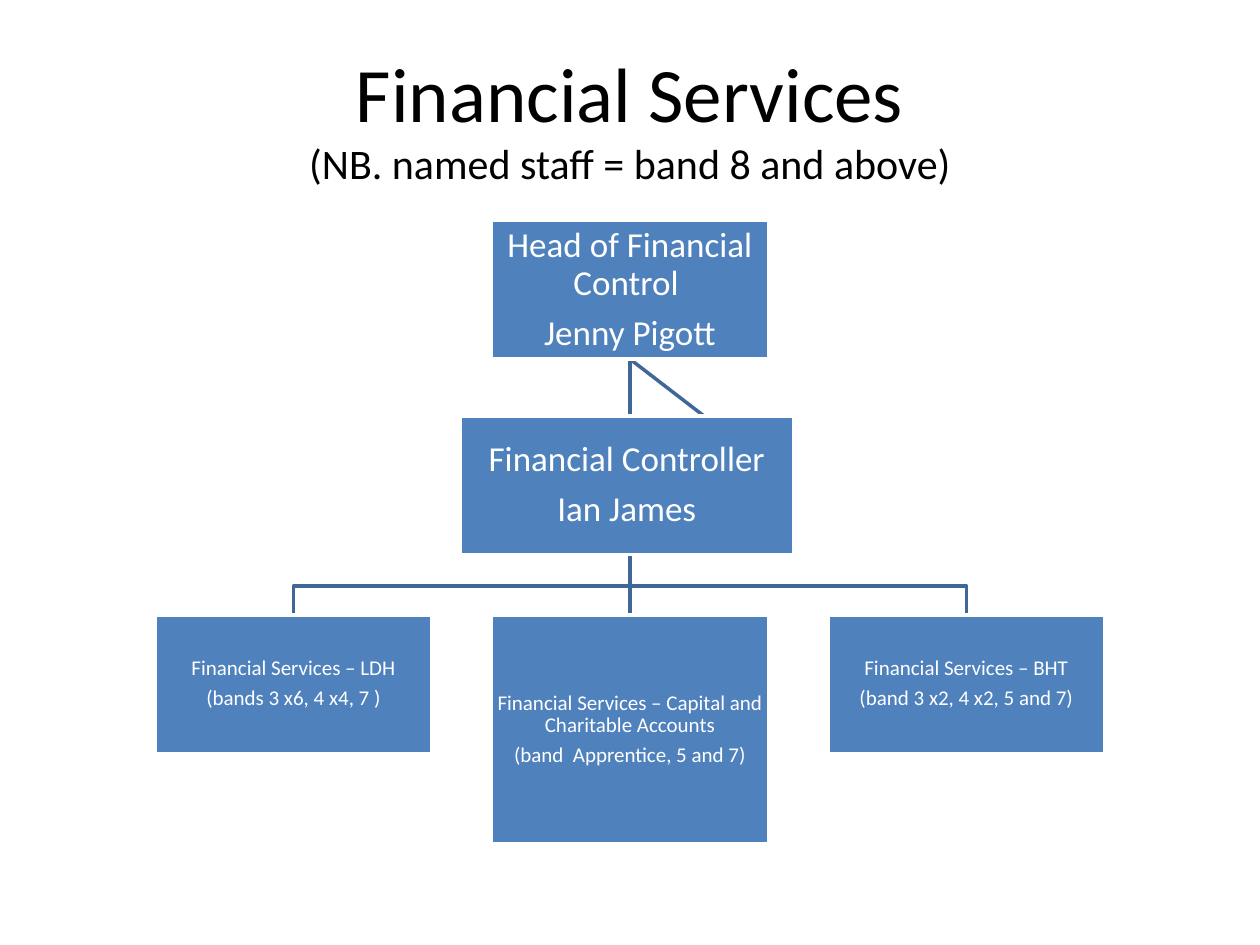
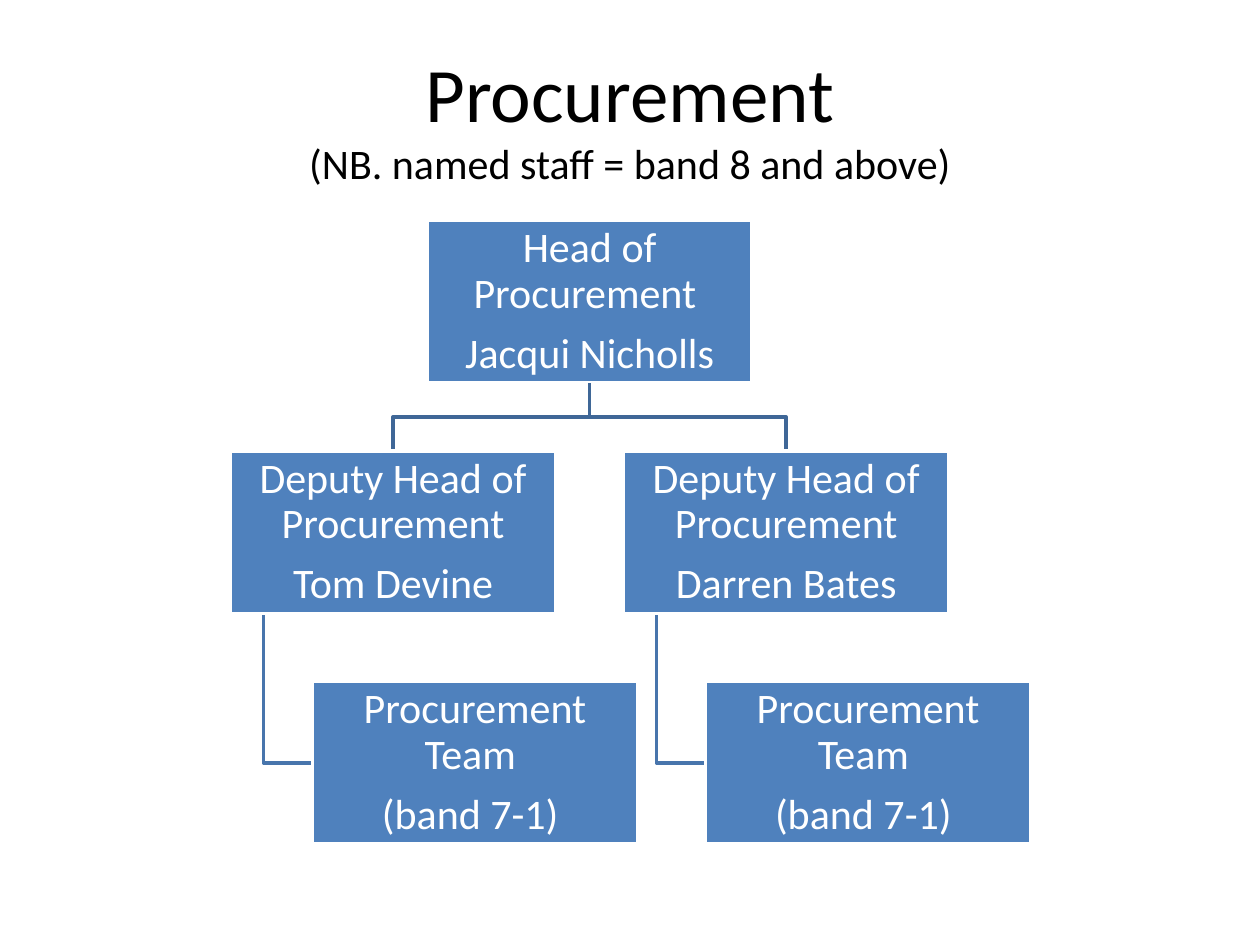
"""Build two organisation charts: Financial Services and Procurement."""
import pptx
import pptx.dml.color
import pptx.enum.shapes
import pptx.enum.text
import pptx.oxml
import pptx.oxml.ns
import pptx.util

Inches = pptx.util.Inches
COLOURS = {"box": "4F81BD", "branch": "3F6797", "team": "4875AC",
           "light": "FFFFFF", "dark": "000000"}
FONT = "Calibri"
NOTE = "(NB. named staff = band 8 and above)"
TOP = 1.75

FINANCE_HEAD = ["Head of Financial Control ", "Jenny Pigott"]
CONTROLLER = ["Financial Controller", "Ian James"]
FINANCE_TEAMS = [
    (["Financial Services – LDH", "(bands 3 x6, 4 x4, 7 )"], 1.1),
    (["Financial Services – Capital and Charitable Accounts",
      "(band  Apprentice, 5 and 7)"], 1.82),
    (["Financial Services – BHT", "(band 3 x2, 4 x2, 5 and 7)"], 1.1),
]
PROCUREMENT_HEAD = ["Head of Procurement ", "Jacqui Nicholls"]
DEPUTIES = [["Deputy Head of Procurement", name] for name in ("Tom Devine", "Darren Bates")]
PROCUREMENT_TEAM = ["Procurement Team ", "(band 7-1) "]


def colour(name):
    return pptx.dml.color.RGBColor.from_string(COLOURS[name])


def write(para, text, size=20, ink="light", spacing=None, after=0):
    para.alignment = pptx.enum.text.PP_ALIGN.CENTER
    para.space_after = pptx.util.Pt(after)
    if spacing:
        para.line_spacing = spacing
    span = para.add_run()
    span.text = text
    span.font.size = pptx.util.Pt(size)
    span.font.name = FONT
    span.font.color.rgb = colour(ink)


def add_page(deck, heading):
    page = deck.slides.add_slide(deck.slide_layouts[5])
    title = page.shapes.title
    title.left, title.top, title.width, title.height = map(Inches, (0.5, 0.3, 9, 1.25))
    frame = title.text_frame
    frame.auto_size = pptx.enum.text.MSO_AUTO_SIZE.NONE
    frame.vertical_anchor = pptx.enum.text.MSO_ANCHOR.MIDDLE
    para = frame.paragraphs[0]
    write(para, heading, size=44, ink="dark")
    para.add_line_break()
    write(para, NOTE, size=24, ink="dark")
    return page


def add_box(page, lines, left, top, width, height, size=20, inset=0.01):
    box = page.shapes.add_shape(pptx.enum.shapes.MSO_SHAPE.RECTANGLE,
                                *map(Inches, (left, top, width, height)))
    box.shadow.inherit = False
    box.fill.solid()
    box.fill.fore_color.rgb = colour("box")
    box.line.color.rgb = colour("light")
    box.line.width = pptx.util.Pt(2)
    frame = box.text_frame
    frame.word_wrap = True
    frame.vertical_anchor = pptx.enum.text.MSO_ANCHOR.MIDDLE
    frame.margin_left = frame.margin_right = Inches(inset)
    frame.margin_top = frame.margin_bottom = Inches(inset)
    for index, text in enumerate(lines):
        para = frame.add_paragraph() if index else frame.paragraphs[0]
        write(para, text, size=size, spacing=0.9, after=0.35 * size)


def add_link(page, points, ink="branch"):
    corners = [(Inches(x), Inches(y)) for x, y in points]
    if len(corners) == 2:
        link = page.shapes.add_connector(pptx.enum.shapes.MSO_CONNECTOR.STRAIGHT,
                                         *corners[0], *corners[1])
        link._element.spPr.append(pptx.oxml.parse_xml(
            f'<a:effectLst {pptx.oxml.ns.nsdecls("a")}/>'))
    else:
        builder = page.shapes.build_freeform(*corners[0])
        builder.add_line_segments(corners[1:], close=False)
        link = builder.convert_to_shape()
        link.shadow.inherit = False
        link.fill.background()
    link.line.color.rgb = colour(ink)
    link.line.width = pptx.util.Pt(2)


def add_branch(page, start, bus, end):
    add_link(page, [start, (start[0], bus), (end[0], bus), end])


def build_finance(deck):
    page = add_page(deck, "Financial Services")
    middle, width, height, pitch, row = 5, 2.2, 1.1, 2.67, 4.88
    start = (middle, TOP + height)
    centres = [middle + pitch * step for step in (-1, 0, 1)]
    add_link(page, [start, (6.3, 3.85)])
    add_link(page, [start, (middle, row)])
    for centre in (centres[0], centres[2]):
        add_branch(page, start, 4.65, (centre, row))
    add_box(page, FINANCE_HEAD, middle - width / 2, TOP, width, height)
    for centre, (lines, depth) in zip(centres, FINANCE_TEAMS):
        add_box(page, lines, centre - width / 2, row, width, depth, size=12)
    add_box(page, CONTROLLER, 3.65, 3.3, 2.65, height)


def build_procurement(deck):
    page = add_page(deck, "Procurement")
    middle, width, height, pitch, row_step = 4.68, 2.58, 1.29, 3.12, 1.83
    deputy_top, team_top = TOP + row_step, TOP + 2 * row_step
    start = (middle, TOP + height)
    style = {"size": 24, "inset": 0.02}
    add_box(page, PROCUREMENT_HEAD, middle - width / 2, TOP, width, height, **style)
    for side, lines in zip((-0.5, 0.5), DEPUTIES):
        centre = middle + side * pitch
        left = centre - width / 2
        stem, team_left = left + 0.26, left + 0.65
        team_middle = team_top + height / 2
        add_branch(page, start, (start[1] + deputy_top) / 2, (centre, deputy_top))
        add_link(page, [(stem, deputy_top + height), (stem, team_middle),
                        (team_left, team_middle)], ink="team")
        add_box(page, lines, left, deputy_top, width, height, **style)
        add_box(page, PROCUREMENT_TEAM, team_left, team_top, width, height, **style)


def main():
    deck = pptx.Presentation()
    deck.slide_width, deck.slide_height = Inches(10), Inches(7.5)
    build_finance(deck)
    build_procurement(deck)
    deck.save("out.pptx")


if __name__ == "__main__":
    main()
